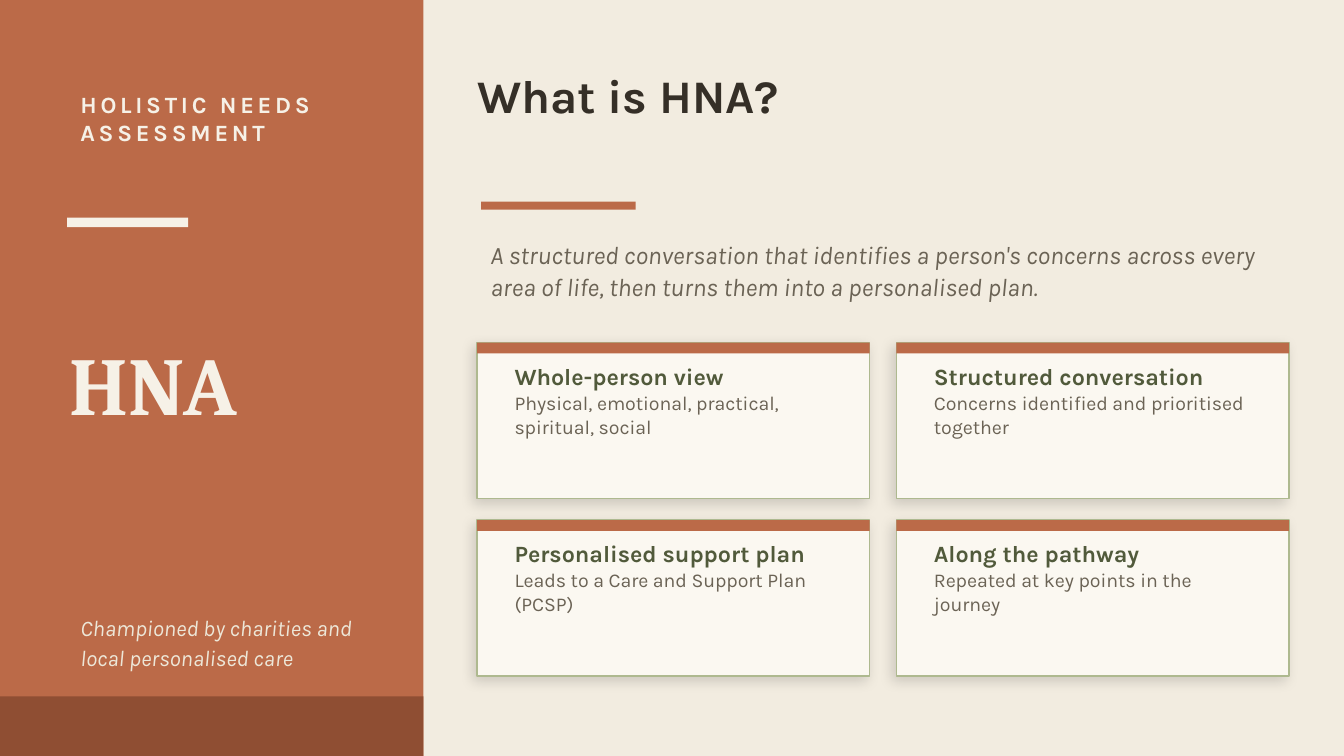
from itertools import product

from lxml.etree import SubElement
from pptx import Presentation
from pptx.dml.color import RGBColor
from pptx.enum.shapes import MSO_SHAPE
from pptx.enum.text import MSO_ANCHOR, MSO_AUTO_SIZE, PP_ALIGN
from pptx.oxml.ns import qn
from pptx.util import Pt

COLORS = {
    "sand": "F2ECE0",
    "clay": "BB6A48",
    "dark_clay": "8F4E33",
    "cream": "F6F1E7",
    "pale": "EDE7D8",
    "ink": "352F27",
    "muted": "6B6355",
    "moss": "515A3B",
    "sage": "AEB98F",
    "card": "FBF8F1",
    "shadow": "000000",
}
BODY_FONT = "Karla"
DISPLAY_FONT = "Cambria"

CARDS = [
    ("Whole-person view", "Physical, emotional, practical, spiritual, social"),
    ("Structured conversation", "Concerns identified and prioritised together"),
    ("Personalised support plan", "Leads to a Care and Support Plan (PCSP)"),
    ("Along the pathway", "Repeated at key points in the journey"),
]
CARD_LEFT, CARD_TOP = 255.6, 183.6
CARD_WIDTH, CARD_HEIGHT = 210.24, 83.52
COLUMN_STEP, ROW_STEP = 224.64, 95.04


def rgb(name):
    return RGBColor.from_string(COLORS[name])


class SlideBuilder:
    def __init__(self, slide):
        self.slide = slide
        slide.background.fill.solid()
        slide.background.fill.fore_color.rgb = rgb("sand")

    def block(self, left, top, width, height, fill, line=None):
        shape = self.slide.shapes.add_shape(
            MSO_SHAPE.RECTANGLE, Pt(left), Pt(top), Pt(width), Pt(height))
        shape.shadow.inherit = False
        shape.fill.solid()
        shape.fill.fore_color.rgb = rgb(fill)
        if line:
            shape.line.color.rgb = rgb(line)
            shape.line.width = Pt(0.75)
        else:
            shape.line.fill.background()
        return shape

    def soft_shadow(self, shape):
        effects = shape._element.spPr.find(qn("a:effectLst"))
        outer = SubElement(effects, qn("a:outerShdw"), blurRad=str(Pt(7)),
                           dist=str(Pt(3)), dir=str(135 * 60000),
                           algn="bl", rotWithShape="0")
        color = SubElement(outer, qn("a:srgbClr"), val=COLORS["shadow"])
        SubElement(color, qn("a:alpha"), val="14000")

    def run(self, paragraph, words, size, color, bold=False, italic=False,
            font=BODY_FONT, tracking=None):
        run = paragraph.add_run()
        run.text = words
        run.font.name = font
        run.font.size = Pt(size)
        run.font.bold = bold
        run.font.italic = italic
        run.font.color.rgb = rgb(color)
        if tracking:
            run._r.get_or_add_rPr().set("spc", str(tracking * 100))

    def text(self, left, top, width, height, lines, leading=None,
             anchor=MSO_ANCHOR.TOP):
        """Add a text box; each line is a dict of arguments for run()."""
        box = self.slide.shapes.add_textbox(
            Pt(left), Pt(top), Pt(width), Pt(height))
        frame = box.text_frame
        frame.word_wrap = True
        frame.vertical_anchor = anchor
        for index, line in enumerate(lines):
            paragraph = frame.add_paragraph() if index else frame.paragraphs[0]
            if leading:
                paragraph.line_spacing = Pt(leading)
            self.run(paragraph, **line)

    def title(self, words):
        title = self.slide.shapes.title
        title.left, title.top = Pt(255.6), Pt(36)
        title.width, title.height = Pt(432), Pt(72)
        frame = title.text_frame
        frame.margin_left = frame.margin_right = 0
        frame.margin_top = frame.margin_bottom = 0
        frame.word_wrap = True
        frame.auto_size = MSO_AUTO_SIZE.NONE
        frame.vertical_anchor = MSO_ANCHOR.TOP
        paragraph = frame.paragraphs[0]
        paragraph.alignment = PP_ALIGN.LEFT
        self.run(paragraph, words, 25, "ink", bold=True)

    def card(self, left, top, heading, detail):
        panel = self.block(left, top, CARD_WIDTH, CARD_HEIGHT, "card", "sage")
        self.soft_shadow(panel)
        self.block(left, top, CARD_WIDTH, 5.76, "clay")
        self.text(left + 12.96, top + 8.64, CARD_WIDTH - 24.48, 69.12, [
            dict(words=heading, size=12.5, color="moss", bold=True),
            dict(words=detail, size=10.5, color="muted"),
        ], leading=13)


def main():
    deck = Presentation()
    deck.slide_width, deck.slide_height = Pt(720), Pt(405)
    page = SlideBuilder(deck.slides.add_slide(deck.slide_layouts[5]))

    # Sidebar
    page.block(0, 0, 226.8, 405, "clay")
    page.block(0, 373, 226.8, 32, "dark_clay")
    page.block(36, 116.64, 64.8, 5.04, "cream")
    page.text(36, 44.64, 172.8, 72, [
        dict(words="HOLISTIC NEEDS ASSESSMENT", size=12.5, color="cream",
             bold=True, tracking=2)], leading=15)
    page.text(30.24, 144, 183.6, 122.4, [
        dict(words="HNA", size=44, color="cream", bold=True,
             font=DISPLAY_FONT)], anchor=MSO_ANCHOR.MIDDLE)
    page.text(36, 324, 169.2, 64.8, [
        dict(words="Championed by charities and local personalised care",
             size=12, color="pale", italic=True)], leading=16)

    # Main panel
    page.title("What is HNA?")
    page.block(257.76, 108, 82.8, 4.32, "clay")
    page.text(255.6, 123.84, 435.6, 54, [
        dict(words="A structured conversation that identifies a person's "
                   "concerns across every area of life, then turns them "
                   "into a personalised plan.",
             size=13.5, color="muted", italic=True)], leading=17)
    for (row, column), (heading, detail) in zip(product(range(2), repeat=2), CARDS):
        page.card(CARD_LEFT + column * COLUMN_STEP,
                  CARD_TOP + row * ROW_STEP, heading, detail)

    deck.save("out.pptx")


if __name__ == "__main__":
    main()
